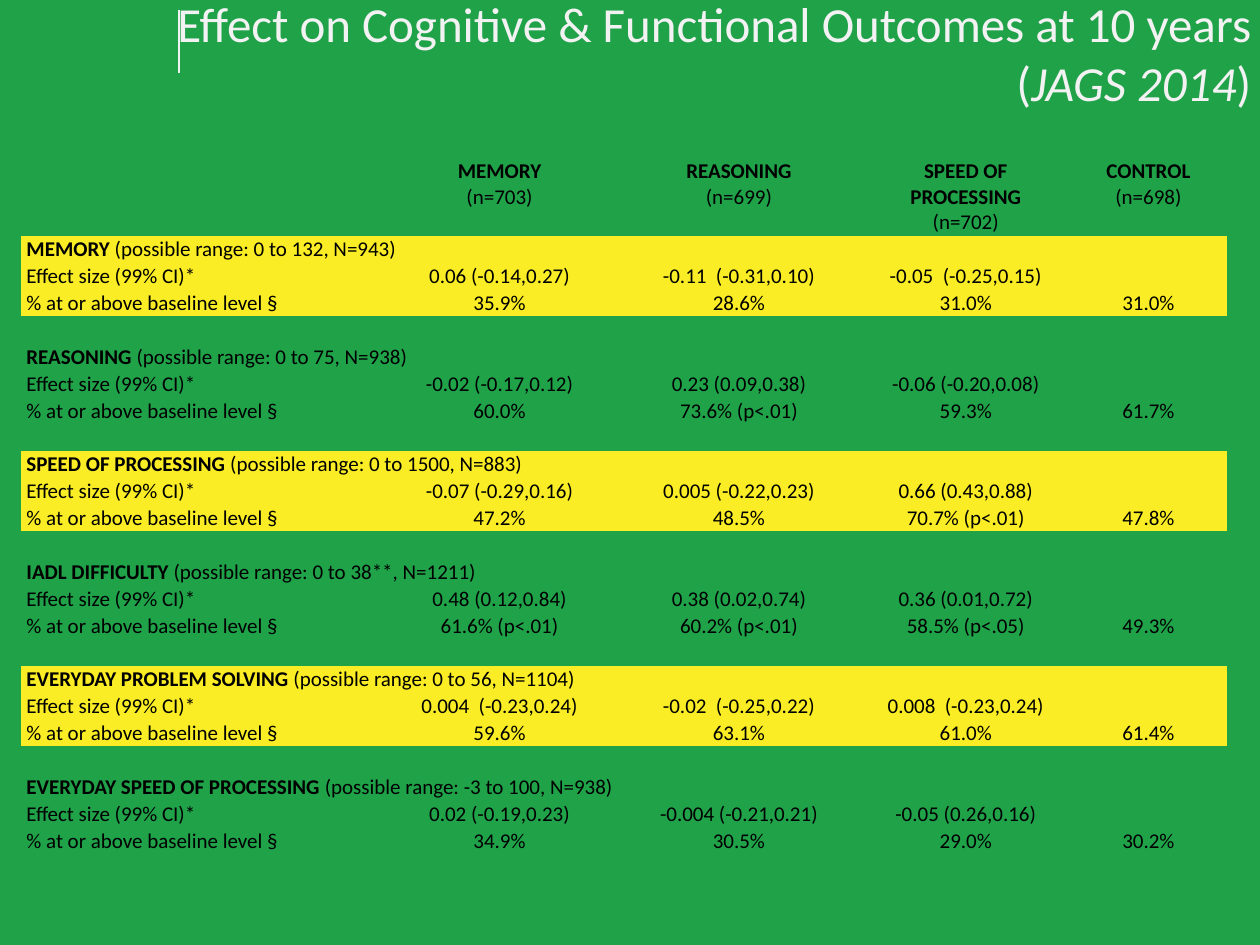
from lxml import etree
from pptx import Presentation
from pptx.dml.color import RGBColor
from pptx.enum import shapes, text
from pptx.oxml import ns
from pptx.util import Inches, Pt

GREEN, YELLOW, BLACK, PALE = "20A249", "FAED25", "000000", "F2F2F2"
NO_STYLE = "{2D5ABB26-0587-4C30-8999-92F81FD0307C}"


def color(value):
    return RGBColor.from_string(value)


def write(paragraph, words, size=12, ink=BLACK, bold=False, italic=False, align=None):
    if align is not None:
        paragraph.alignment = align
    run = paragraph.add_run()
    run.text = words
    font = run.font
    font.name, font.size, font.bold, font.italic = "Calibri", Pt(size), bold, italic
    font.color.rgb = color(ink)


presentation = Presentation()
presentation.slide_width, presentation.slide_height = Inches(10), Inches(7.5)
slide = presentation.slides.add_slide(presentation.slide_layouts[5])
slide.background.fill.solid()
slide.background.fill.fore_color.rgb = color(GREEN)

# Rule beside the title
rule = slide.shapes.add_connector(
    shapes.MSO_CONNECTOR.STRAIGHT, Inches(1.42), Inches(0.08), Inches(1.42), Inches(0.58))
rule.line.color.rgb = color(PALE)
rule.line.width = Pt(0.75)
etree.SubElement(rule._element.spPr, ns.qn("a:effectLst"))

# Title
title = slide.shapes.title
title.left, title.top = Inches(0.92), Inches(0.08)
title.width, title.height = Inches(9.25), Inches(0.67)
frame = title.text_frame
frame.word_wrap = True
frame.auto_size = text.MSO_AUTO_SIZE.NONE
frame.vertical_anchor = text.MSO_ANCHOR.MIDDLE
frame.margin_right = Inches(0.24)
heading = frame.paragraphs[0]
title_format = {"size": 28, "ink": PALE, "align": text.PP_ALIGN.RIGHT}
write(heading, "Effect on Cognitive & Functional Outcomes at 10 years", **title_format)
heading.add_line_break()
write(heading, "(", **title_format)
write(heading, "JAGS 2014", italic=True, **title_format)
write(heading, ")", **title_format)

# Table contents
groups = [("MEMORY", "(n=703)"), ("REASONING", "(n=699)"),
          ("SPEED OF PROCESSING", "(n=702)"), ("CONTROL", "(n=698)")]
outcomes = [
    ("MEMORY", "0 to 132, N=943",
     ["0.06 (-0.14,0.27)", "-0.11  (-0.31,0.10)", "-0.05  (-0.25,0.15)"],
     ["35.9%", "28.6%", "31.0%", "31.0%"]),
    ("REASONING", "0 to 75, N=938",
     ["-0.02 (-0.17,0.12)", "0.23 (0.09,0.38)", "-0.06 (-0.20,0.08)"],
     ["60.0%", "73.6% (p<.01)", "59.3%", "61.7%"]),
    ("SPEED OF PROCESSING", "0 to 1500, N=883",
     ["-0.07 (-0.29,0.16)", "0.005 (-0.22,0.23)", "0.66 (0.43,0.88)"],
     ["47.2%", "48.5%", "70.7% (p<.01)", "47.8%"]),
    ("IADL DIFFICULTY", "0 to 38**, N=1211",
     ["0.48 (0.12,0.84)", "0.38 (0.02,0.74)", "0.36 (0.01,0.72)"],
     ["61.6% (p<.01)", "60.2% (p<.01)", "58.5% (p<.05)", "49.3%"]),
    ("EVERYDAY PROBLEM SOLVING", "0 to 56, N=1104",
     ["0.004  (-0.23,0.24)", "-0.02  (-0.25,0.22)", "0.008  (-0.23,0.24)"],
     ["59.6%", "63.1%", "61.0%", "61.4%"]),
    ("EVERYDAY SPEED OF PROCESSING", "-3 to 100, N=938",
     ["0.02 (-0.19,0.23)", "-0.004 (-0.21,0.21)", "-0.05 (0.26,0.16)"],
     ["34.9%", "30.5%", "29.0%", "30.2%"]),
]

# Table grid: a header, then three rows per outcome with a spacer between outcomes
row_count = 4 * len(outcomes)
table = slide.shapes.add_table(
    row_count, 5, Inches(0.17), Inches(1.25), Inches(9.57), Inches(5.4)).table
table.first_row = table.horz_banding = False
table._tbl.tblPr.find(ns.qn("a:tableStyleId")).text = NO_STYLE
for column, width in zip(table.columns, [2.87, 1.85, 1.95, 1.65, 1.25]):
    column.width = Inches(width)
for index, row in enumerate(table.rows):
    row.height = Inches(0.21 if index else 0.62)
    shaded = index % 8 in (1, 2, 3)
    for cell in row.cells:
        cell.margin_left = cell.margin_right = Inches(0.04)
        cell.margin_top, cell.margin_bottom = Inches(0.01), 0
        if shaded:
            cell.fill.solid()
            cell.fill.fore_color.rgb = color(YELLOW)
        else:
            cell.fill.background()

# Header
center = text.PP_ALIGN.CENTER
for column, (group, count) in enumerate(groups, start=1):
    frame = table.cell(0, column).text_frame
    write(frame.paragraphs[0], group, bold=True, align=center)
    write(frame.add_paragraph(), count, align=center)

# Outcomes
for number, (outcome, scale, effects, shares) in enumerate(outcomes):
    top = 4 * number + 1
    table.cell(top, 0).merge(table.cell(top, 4))
    paragraph = table.cell(top, 0).text_frame.paragraphs[0]
    write(paragraph, outcome + " ", bold=True)
    write(paragraph, f"(possible range: {scale})")
    lines = [("Effect size (99% CI)*", effects), ("% at or above baseline level §", shares)]
    for row, (label, values) in enumerate(lines, start=top + 1):
        write(table.cell(row, 0).text_frame.paragraphs[0], label)
        for column, value in enumerate(values, start=1):
            write(table.cell(row, column).text_frame.paragraphs[0], value, align=center)
    if top + 3 < row_count:
        table.cell(top + 3, 0).merge(table.cell(top + 3, 4))

# Empty cells take the same text size so that they do not stretch their rows
for cell in table.iter_cells():
    if not cell.text_frame.text:
        end = etree.SubElement(cell.text_frame.paragraphs[0]._p, ns.qn("a:endParaRPr"))
        end.set("sz", "1200")
        etree.SubElement(end, ns.qn("a:latin")).set("typeface", "Calibri")

presentation.save("out.pptx")
